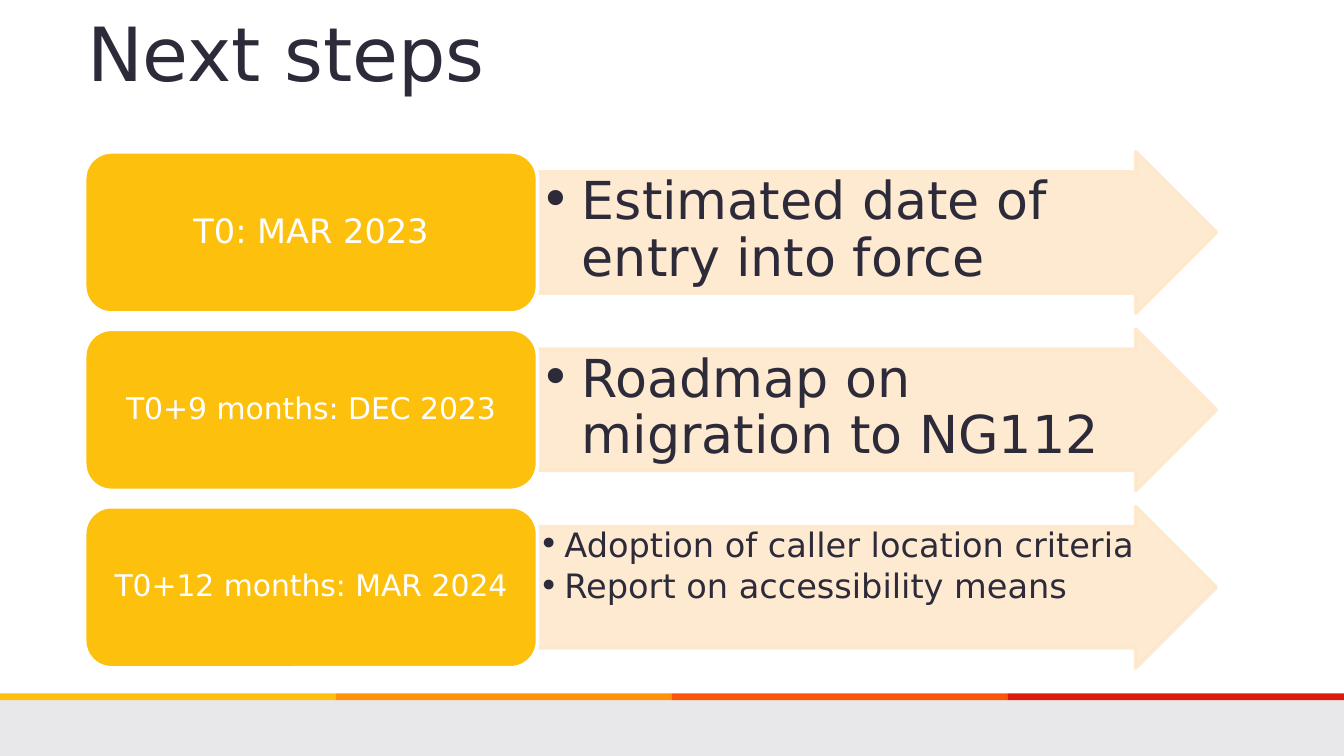
import pptx
import pptx.util
import pptx.dml.color
import pptx.enum.shapes
import pptx.enum.text
import pptx.oxml
from pptx.oxml.ns import qn, nsdecls
from lxml import etree

# Content
TITLE = "Next steps"
STEPS = [  # label, label size, bullets, bullet size, hanging indent, inset
    ("T0: MAR 2023", 18, ["Estimated date of entry into force"], 28, 0.31, 0.02),
    ("T0+9 months: DEC 2023", 16, ["Roadmap on migration to NG112"], 28, 0.31, 0.02),
    ("T0+12 months: MAR 2024", 16,
     ["Adoption of caller location criteria", "Report on accessibility means"], 18, 0.19, 0.01),
]
COLORS = {"dark": "2D2B3A", "white": "FFFFFF", "footer": "E8E8EA",
          "label": "FDC00D", "arrow": "FEE8CC"}
STRIPES = ["FDC00D", "FE9309", "FC5507", "DC1B0C"]
FONT = "DejaVu Sans"

# Layout in inches, on a 16:9 slide
W = 10
H = W * 9 / 16
STRIPE_TOP, STRIPE_H = 5.16, 0.05
LABEL_X, LABEL_W, LABEL_PAD = 0.63, 3.37, 0.06
ARROW_X, ARROW_W, ARROW_TEXT_W = 4, 5.05, 4.6
ROW_TOP, ROW_H, ROW_PITCH = 1.13, 1.2, 1.32
SHAFT = 0.75  # share of the arrow's height

Inches, Pt = pptx.util.Inches, pptx.util.Pt
SHAPE = pptx.enum.shapes.MSO_SHAPE
ANCHOR = pptx.enum.text.MSO_ANCHOR
ALIGN = pptx.enum.text.PP_ALIGN

prs = pptx.Presentation()
prs.slide_width, prs.slide_height = Inches(W), Inches(H)
s = prs.slides.add_slide(prs.slide_layouts[6])


def rgb(color):
    return pptx.dml.color.RGBColor.from_string(color)


def add_shape(kind, x, y, w, h, fill, line=None):
    sp = s.shapes.add_shape(kind, Inches(x), Inches(y), Inches(w), Inches(h))
    sp.shadow.inherit = False
    sp.fill.solid()
    sp.fill.fore_color.rgb = rgb(fill)
    if line:
        sp.line.color.rgb = rgb(line)
        sp.line.width = Pt(2)
    else:
        sp.line.fill.background()
    return sp


def add_text(lines, x, y, w, h, size, color, insets, anchor=ANCHOR.TOP,
             align=ALIGN.LEFT, spacing=0.9, indent=0):
    tf = s.shapes.add_textbox(Inches(x), Inches(y), Inches(w), Inches(h)).text_frame
    tf.word_wrap = True
    tf.vertical_anchor = anchor
    tf.margin_left = tf.margin_right = Inches(insets[0])
    tf.margin_top = tf.margin_bottom = Inches(insets[1])
    for i, line in enumerate(lines):
        p = tf.add_paragraph() if i else tf.paragraphs[0]
        p.alignment = align
        p.line_spacing = spacing
        if indent:
            p.space_after = Pt(2.7)
            pPr = p._p.get_or_add_pPr()
            pPr.set("marL", str(Inches(indent)))
            pPr.set("indent", str(-Inches(indent)))
            etree.SubElement(pPr, qn("a:buFont")).set("typeface", FONT)
            etree.SubElement(pPr, qn("a:buChar")).set("char", "•")
        r = p.add_run()
        r.text = line
        r.font.name, r.font.size = FONT, Pt(size)
        r.font.color.rgb = rgb(color)


# Footer band with a soft shadow, and the coloured stripe above it
footer_top = STRIPE_TOP + STRIPE_H
footer = add_shape(SHAPE.RECTANGLE, 0, footer_top, W, H - footer_top, COLORS["footer"])
footer._element.spPr.find(qn("a:effectLst")).append(pptx.oxml.parse_xml(
    f'<a:outerShdw {nsdecls("a")} blurRad="39370" dist="22860" dir="5400000" rotWithShape="0">'
    '<a:srgbClr val="000000"><a:alpha val="35000"/></a:srgbClr></a:outerShdw>'))
stripe_w = W / len(STRIPES)
for i, color in enumerate(STRIPES):
    add_shape(SHAPE.RECTANGLE, i * stripe_w, STRIPE_TOP, stripe_w, STRIPE_H, color)

# Title
add_text([TITLE], 0.55, 0, 8.5, 0.87, 40, COLORS["dark"], (0.1, 0.05), spacing=1.0)

# One row per step: arrow with bullets, then the date label
for i, (label, label_size, bullets, size, indent, inset) in enumerate(STEPS):
    y = ROW_TOP + i * ROW_PITCH
    arrow = add_shape(SHAPE.RIGHT_ARROW, ARROW_X, y, ARROW_W, ROW_H,
                      COLORS["arrow"], COLORS["arrow"])
    arrow.adjustments[0], arrow.adjustments[1] = SHAFT, 0.5
    for clr in arrow._element.spPr.iter(qn("a:srgbClr")):
        etree.SubElement(clr, qn("a:alpha")).set("val", "90000")
    add_text(bullets, ARROW_X, y + ROW_H * (1 - SHAFT) / 2, ARROW_TEXT_W, ROW_H * SHAFT,
             size, COLORS["dark"], (inset, inset), indent=indent)

    add_shape(SHAPE.ROUNDED_RECTANGLE, LABEL_X, y, LABEL_W, ROW_H,
              COLORS["label"], COLORS["white"])
    add_text([label], LABEL_X + LABEL_PAD, y + LABEL_PAD, LABEL_W - 2 * LABEL_PAD,
             ROW_H - 2 * LABEL_PAD, label_size, COLORS["white"], (0.07, 0.03),
             ANCHOR.MIDDLE, ALIGN.CENTER)

prs.save("out.pptx")
